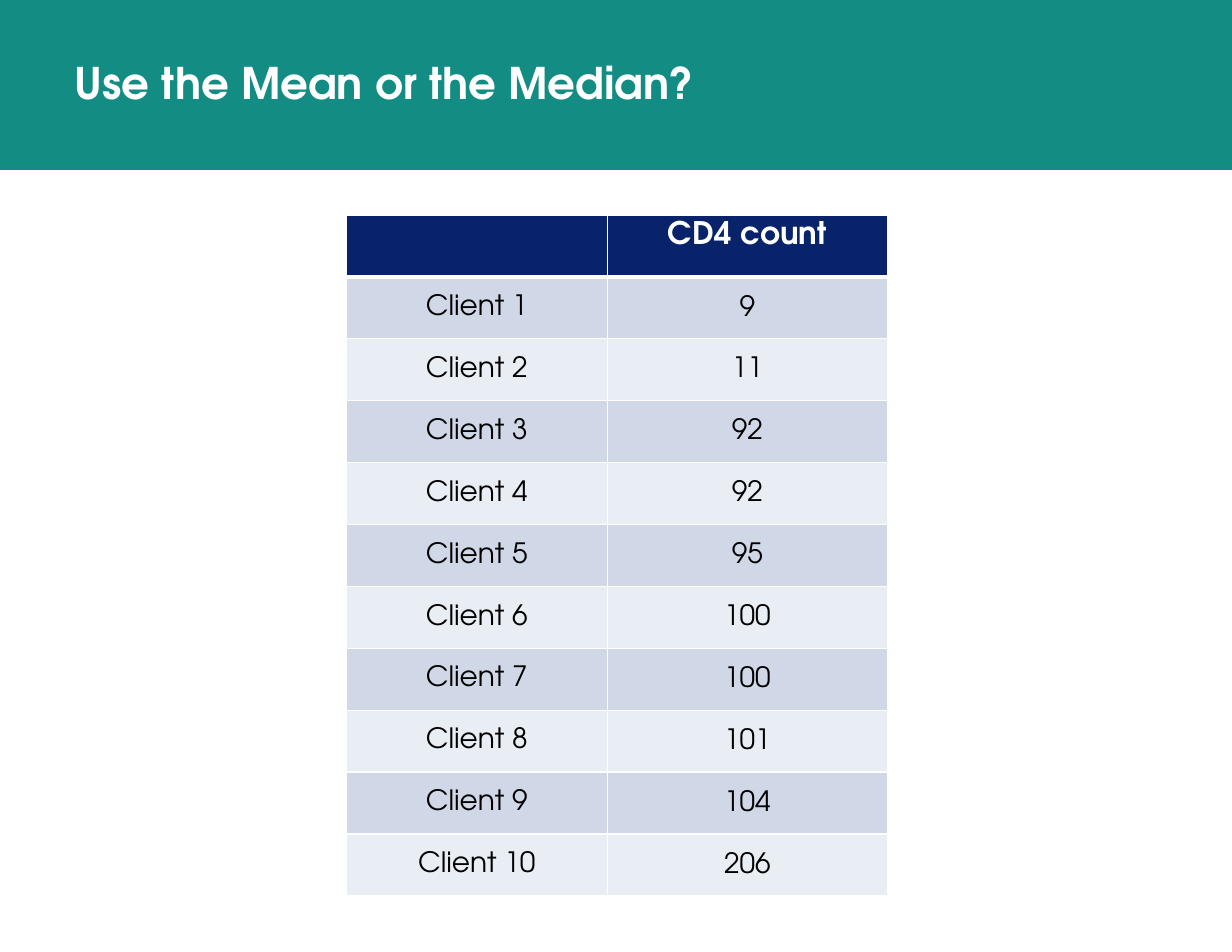
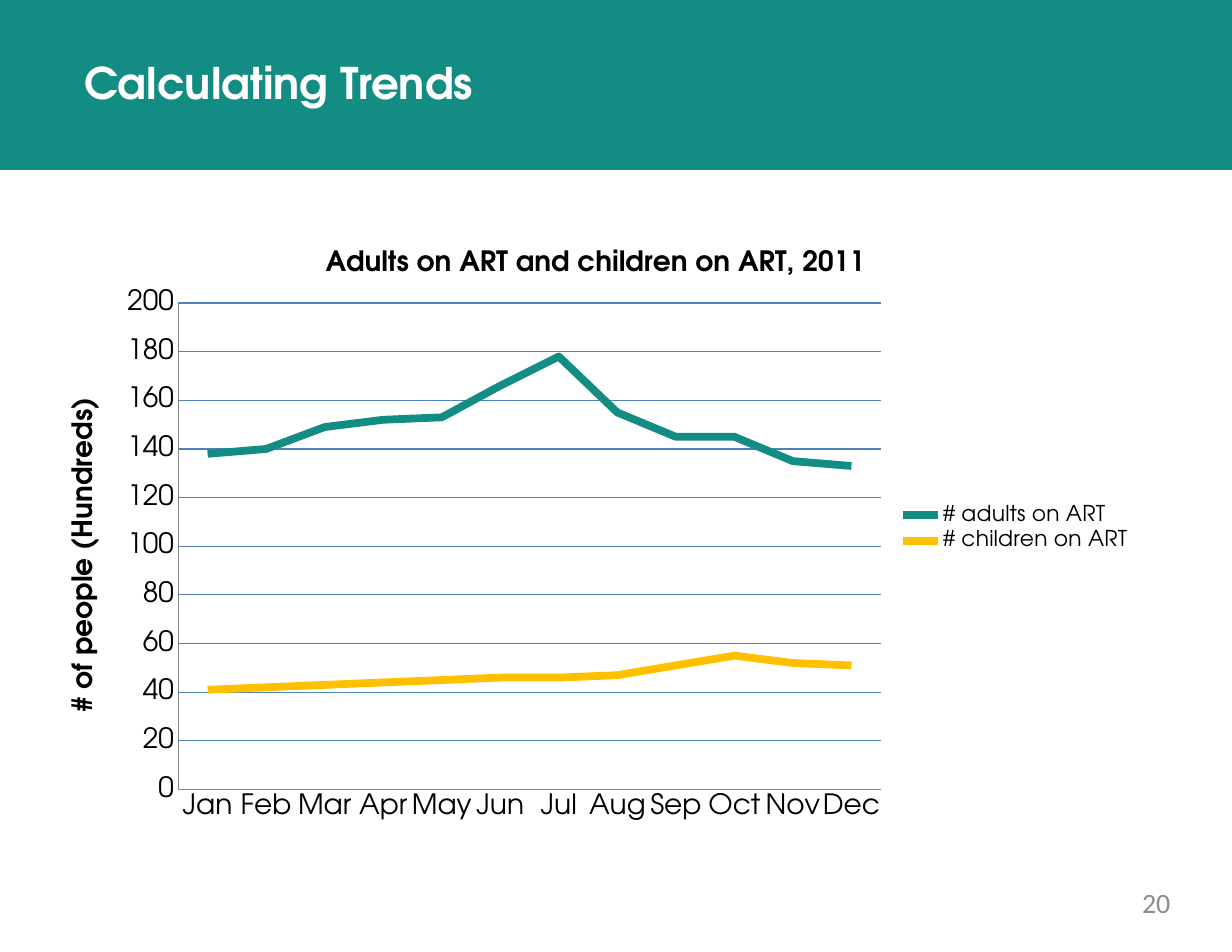
from lxml import etree
from pptx import Presentation
from pptx.chart.data import CategoryChartData
from pptx.dml.color import RGBColor
from pptx.enum.chart import XL_CHART_TYPE as ChartType
from pptx.enum.chart import XL_LEGEND_POSITION as LegendPosition
from pptx.enum.chart import XL_TICK_MARK as TickMark
from pptx.enum.shapes import MSO_SHAPE as Preset
from pptx.enum.text import MSO_ANCHOR as Anchor
from pptx.enum.text import PP_ALIGN as Align
from pptx.oxml import parse_xml
from pptx.oxml.ns import nsdecls, qn
from pptx.util import Pt

# Shared look
WIDTH, HEIGHT = 792, 612
FONT = "TeX Gyre Adventor"
TEAL, NAVY, GOLD = "138D84", "09236A", "FFC000"
WHITE, BLACK, GREY = "FFFFFF", "000000", "8C8C8C"
ROW_FILLS = ("D0D8E8", "E9EDF4")
GRID_BLUE, AXIS_GREY = "4F81BD", "868686"

# Content
CD4_COUNTS = (9, 11, 92, 92, 95, 100, 100, 101, 104, 206)
MONTHS = "Jan Feb Mar Apr May Jun Jul Aug Sep Oct Nov Dec".split()
ART_SERIES = (
    ("# adults on ART", TEAL,
     (138, 140, 149, 152, 153, 166, 178, 155, 145, 145, 135, 133)),
    ("# children on ART", GOLD,
     (41, 42, 43, 44, 45, 46, 46, 47, 51, 55, 52, 51)),
)


def color(hex_value):
    return RGBColor.from_string(hex_value)


def add_run(paragraph, text, size, hex_value, bold=False, font=FONT):
    run = paragraph.add_run()
    run.text = text
    run.font.name = font
    run.font.size = Pt(size)
    run.font.bold = bold
    run.font.color.rgb = color(hex_value)


def set_margins(target, left, top, right, bottom):
    target.margin_left, target.margin_top = Pt(left), Pt(top)
    target.margin_right, target.margin_bottom = Pt(right), Pt(bottom)


def add_titled_slide(presentation, title_text, left):
    slide = presentation.slides.add_slide(presentation.slide_layouts[5])
    title = slide.shapes.title
    title.left, title.top = Pt(left), Pt(36)
    title.width, title.height = Pt(626), Pt(34)
    frame = title.text_frame
    frame.vertical_anchor = Anchor.TOP
    set_margins(frame, 0, 0, 0, 0)
    paragraph = frame.paragraphs[0]
    paragraph.alignment = Align.LEFT
    add_run(paragraph, title_text, 28, WHITE, bold=True)

    # Band behind the title
    band = slide.shapes.add_shape(Preset.RECTANGLE, 0, 0, Pt(WIDTH), Pt(109.2))
    band.shadow.inherit = False
    band.fill.solid()
    band.fill.fore_color.rgb = color(TEAL)
    band.line.fill.background()
    title.element.addprevious(band.element)
    return slide


def set_borders(cell, top, bottom):
    properties = cell._tc.get_or_add_tcPr()
    sides = (("lnL", 1), ("lnR", 1), ("lnT", top), ("lnB", bottom))
    for index, (side, width) in enumerate(sides):
        properties.insert(index, parse_xml(
            f'<a:{side} {nsdecls("a")} w="{Pt(width)}"><a:solidFill>'
            f'<a:srgbClr val="{WHITE}"/></a:solidFill></a:{side}>'))


def add_count_table(slide):
    rows = [("", "CD4 count")]
    rows += [(f"Client {number}", str(count))
             for number, count in enumerate(CD4_COUNTS, 1)]
    row_height, column_widths = 39.8, (168, 180)
    table = slide.shapes.add_table(
        len(rows), 2, Pt(222.5), Pt(138.2), Pt(sum(column_widths)),
        Pt(row_height * len(rows))).table
    for column, width in zip(table.columns, column_widths):
        column.width = Pt(width)
    for row_index, texts in enumerate(rows):
        table.rows[row_index].height = Pt(row_height)
        header = row_index == 0
        for column_index, text in enumerate(texts):
            cell = table.cell(row_index, column_index)
            cell.fill.solid()
            cell.fill.fore_color.rgb = color(
                NAVY if header else ROW_FILLS[(row_index - 1) % 2])
            set_borders(cell, top=3 if row_index == 1 else 1,
                        bottom=3 if header else 1)
            cell.vertical_anchor = Anchor.TOP if header else Anchor.MIDDLE
            if header or column_index == 0:
                set_margins(cell, 8.6, 4.3, 8.6, 4.3)
            else:
                set_margins(cell, 0.7, 0.7, 0.7, 0)
            paragraph = cell.text_frame.paragraphs[0]
            paragraph.alignment = Align.CENTER
            if text:
                add_run(paragraph, text, 20 if header else 18,
                        WHITE if header else BLACK, bold=header)


def place_plot(chart, **fractions):
    plot_area = chart.element.find(".//" + qn("c:plotArea"))
    for old_layout in plot_area.findall(qn("c:layout")):
        plot_area.remove(old_layout)
    layout = etree.Element(qn("c:layout"))
    manual = etree.SubElement(layout, qn("c:manualLayout"))
    settings = {"layoutTarget": "inner", "xMode": "edge", "yMode": "edge",
                **fractions}
    for name, value in settings.items():
        etree.SubElement(manual, qn("c:" + name)).set("val", str(value))
    plot_area.insert(0, layout)


def style_line(line, hex_value, width):
    line.color.rgb = color(hex_value)
    line.width = Pt(width)


def add_trend_chart(slide):
    data = CategoryChartData()
    data.categories = MONTHS
    for name, _, values in ART_SERIES:
        data.add_series(name, values)
    chart = slide.shapes.add_chart(
        ChartType.LINE, Pt(30), Pt(144), Pt(705.6), Pt(391), data).chart
    chart.font.name = FONT
    chart.font.size = Pt(18)
    chart.font.color.rgb = color(BLACK)
    place_plot(chart, x=0.12, y=0.13, w=0.64, h=0.8)

    chart.has_title = True
    add_run(chart.chart_title.text_frame.paragraphs[0],
            "Adults on ART and children on ART, 2011", 18, BLACK, bold=True)
    chart.has_legend = True
    chart.legend.position = LegendPosition.RIGHT
    chart.legend.include_in_layout = False
    chart.legend.font.size = Pt(14)
    chart.legend.font.name = FONT

    # Axes
    for axis in (chart.category_axis, chart.value_axis):
        axis.major_tick_mark = axis.minor_tick_mark = TickMark.NONE
        style_line(axis.format.line, AXIS_GREY, 0.75)
    value_axis = chart.value_axis
    value_axis.minimum_scale, value_axis.maximum_scale = 0, 200
    value_axis.major_unit = 20
    style_line(value_axis.major_gridlines.format.line, GRID_BLUE, 0.75)
    add_run(value_axis.axis_title.text_frame.paragraphs[0],
            "# of people (Hundreds)", 18, BLACK, bold=True)

    # Lines
    chart.plots[0].vary_by_categories = False
    for series, (_, hex_value, _) in zip(chart.plots[0].series, ART_SERIES):
        series.smooth = False
        style_line(series.format.line, hex_value, 5)


def add_page_number(slide, number):
    box = slide.shapes.add_textbox(Pt(570), Pt(569.5), Pt(182.4), Pt(30))
    frame = box.text_frame
    frame.word_wrap = True
    set_margins(frame, 0, 0, 0, 0)
    paragraph = frame.paragraphs[0]
    paragraph.alignment = Align.RIGHT
    add_run(paragraph, str(number), 18, GREY, font="Calibri")


def main():
    presentation = Presentation()
    presentation.slide_width, presentation.slide_height = Pt(WIDTH), Pt(HEIGHT)

    slide = add_titled_slide(presentation, "Use the Mean or the Median?", 48)
    add_count_table(slide)

    slide = add_titled_slide(presentation, "Calculating Trends", 54)
    add_trend_chart(slide)
    add_page_number(slide, 20)

    presentation.save("out.pptx")


if __name__ == "__main__":
    main()
